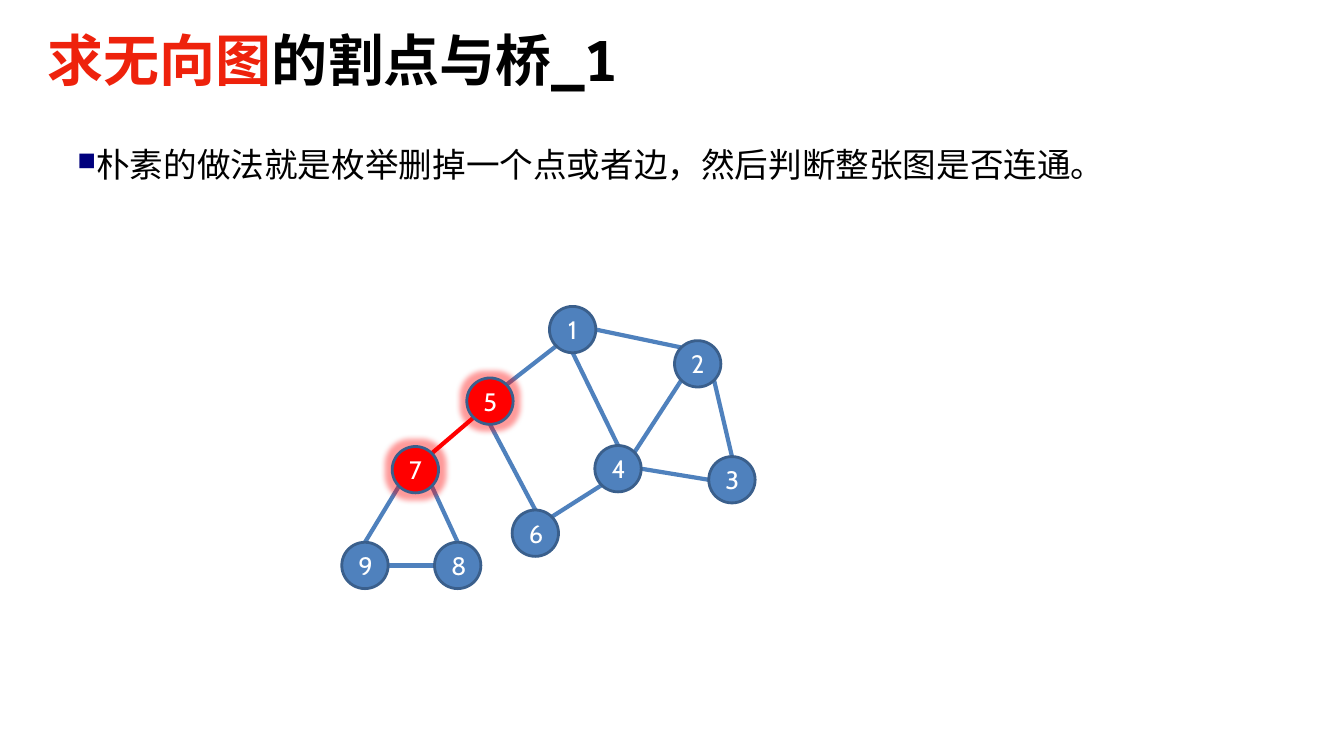
from dataclasses import dataclass
from math import sqrt

from lxml import etree
from pptx import Presentation, util as u
from pptx.dml.color import RGBColor
from pptx.enum import shapes, text
from pptx.oxml import parse_xml
from pptx.oxml.ns import nsdecls, qn


@dataclass(frozen=True)
class Theme:
    black: str = "000000"
    white: str = "FFFFFF"
    title_red: str = "EE220C"
    bullet: str = "00007D"
    node: str = "4F81BD"
    outline: str = "3A5F8C"
    cut: str = "FF0000"
    font: str = "Noto Sans Mono"
    node_font: str = "Cabin"
    title_size: int = 40
    body_size: int = 24
    node_size: int = 18


theme = Theme()


def style(font, name, size, colour):
    font.name, font.size = name, u.Pt(size)
    font.color.rgb = RGBColor.from_string(colour)


deck = Presentation()
deck.slide_width, deck.slide_height = u.Inches(13.33), u.Inches(7.5)
page = deck.slides.add_slide(deck.slide_layouts[6])

# Title
box = page.shapes.add_textbox(*map(u.Inches, (0.47, 0.24, 12.4, 0.68)))
frame = box.text_frame
frame.word_wrap = True
frame.vertical_anchor = text.MSO_ANCHOR.MIDDLE
frame.margin_left = frame.margin_right = frame.margin_bottom = 0
frame.margin_top = u.Inches(0.01)
para = frame.paragraphs[0]
style(para.font, theme.font, theme.title_size, theme.black)
para.font.bold = True
for words, colour in (("求无向图", theme.title_red), ("的割点与桥_1", theme.black)):
    span = para.add_run()
    span.text = words
    span.font.color.rgb = RGBColor.from_string(colour)

# Bulleted statement
box = page.shapes.add_textbox(*map(u.Inches, (0.67, 1.31, 10.48, 1.33)))
box.text_frame.word_wrap = True
para = box.text_frame.paragraphs[0]
para.text = "朴素的做法就是枚举删掉一个点或者边，然后判断整张图是否连通。"
props = para._p.get_or_add_pPr()
props.set("marL", str(u.Inches(0.01)))
props.set("indent", str(u.Inches(-0.38)))
colour = etree.SubElement(props, qn("a:buClr"))
etree.SubElement(colour, qn("a:srgbClr"), val=theme.bullet)
etree.SubElement(props, qn("a:buSzPct"), val="75000")
etree.SubElement(props, qn("a:buChar"), char="■")
para.line_spacing = 1.18
style(para.font, theme.font, theme.body_size, theme.black)

# Graph: node centres in inches, edges as node and compass side at each end
diameter = 0.46
centres = {
    1: (5.68, 3.27), 2: (6.92, 3.61), 3: (7.26, 4.76),
    4: (6.13, 4.65), 5: (4.86, 3.98), 6: (5.31, 5.29),
    7: (4.12, 4.66), 8: (4.54, 5.61), 9: (3.62, 5.61),
}
cut_nodes = {5, 7}
edges = [
    (1, "E", 2, "NW"), (2, "SE", 3, "N"), (2, "SW", 4, "NE"),
    (4, "N", 1, "S"), (1, "SW", 5, "NE"), (5, "S", 6, "N"),
    (6, "NE", 4, "SW"), (4, "E", 3, "W"), (5, "SW", 7, "NE"),
    (7, "SE", 8, "N"), (9, "N", 7, "SW"), (8, "W", 9, "E"),
]


def rim_point(node, side):
    """Return the point on a node's circle that faces a compass side."""
    reach = diameter / 2 / sqrt(len(side))
    across = ("E" in side) - ("W" in side)
    down = ("S" in side) - ("N" in side)
    x, y = centres[node]
    return u.Inches(x + reach * across), u.Inches(y + reach * down)


for start, start_side, end, end_side in edges:
    edge = page.shapes.add_connector(
        shapes.MSO_CONNECTOR.STRAIGHT,
        *rim_point(start, start_side), *rim_point(end, end_side))
    is_bridge = {start, end} == cut_nodes
    edge.line.color.rgb = RGBColor.from_string(theme.cut if is_bridge else theme.node)
    edge.line.width = u.Pt(3)
    etree.SubElement(edge._element.spPr, qn("a:effectLst"))

for number, (x, y) in centres.items():
    node = page.shapes.add_shape(
        shapes.MSO_SHAPE.OVAL, u.Inches(x - diameter / 2), u.Inches(y - diameter / 2),
        u.Inches(diameter), u.Inches(diameter))
    node.shadow.inherit = False
    node.fill.solid()
    node.fill.fore_color.rgb = RGBColor.from_string(
        theme.cut if number in cut_nodes else theme.node)
    node.line.color.rgb = RGBColor.from_string(theme.outline)
    node.line.width = u.Pt(2)
    if number in cut_nodes:
        node._element.spPr.find(qn("a:effectLst")).append(parse_xml(
            f'<a:glow {nsdecls("a")} rad="{u.Pt(8)}"><a:srgbClr val="{theme.cut}">'
            '<a:alpha val="40000"/></a:srgbClr></a:glow>'))
    frame = node.text_frame
    frame.vertical_anchor = text.MSO_ANCHOR.MIDDLE
    para = frame.paragraphs[0]
    para.text = str(number)
    para.alignment = text.PP_ALIGN.CENTER
    style(para.font, theme.node_font, theme.node_size, theme.white)

deck.save("out.pptx")
